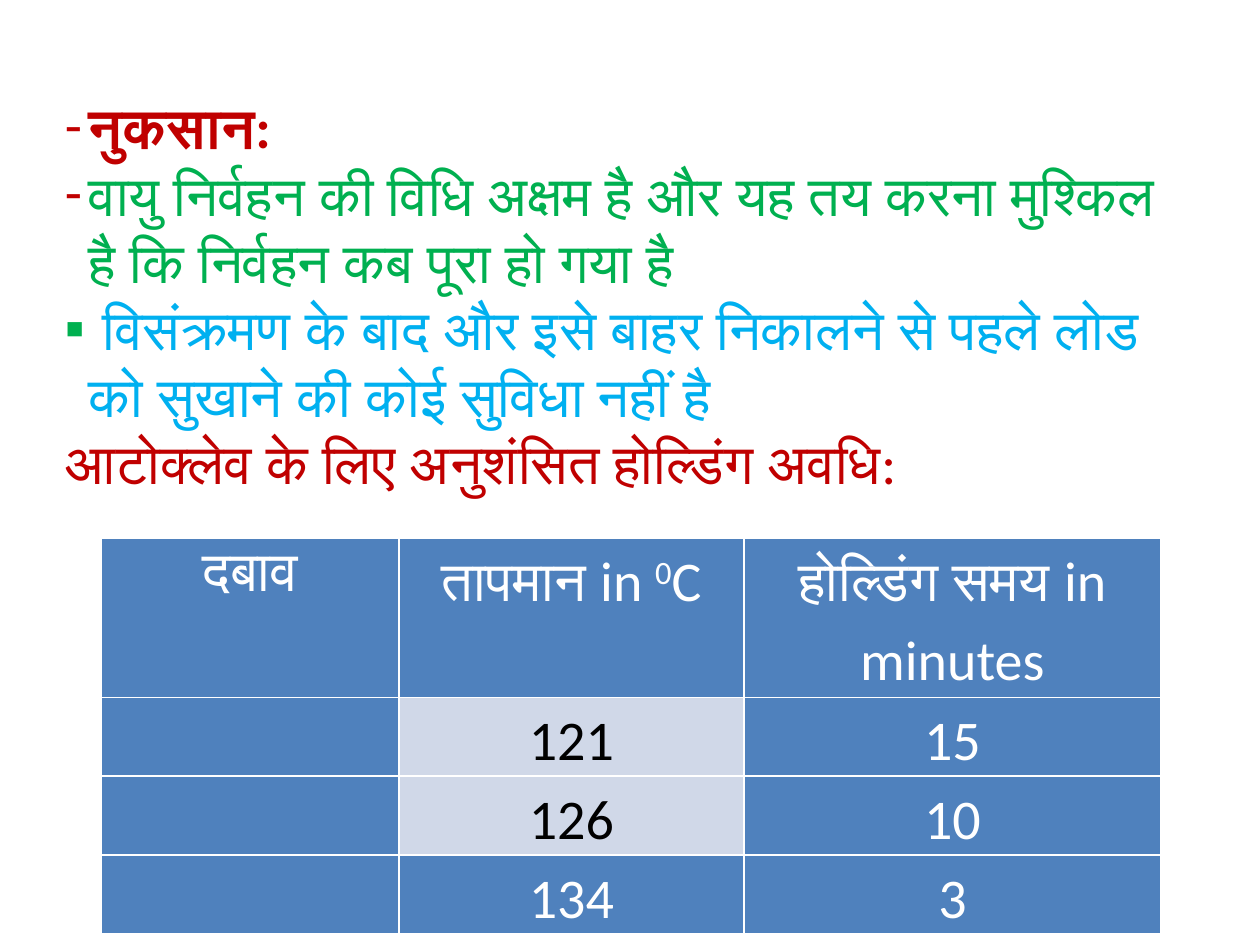
from lxml import etree
from pptx import Presentation
from pptx.dml.color import RGBColor
from pptx.enum.text import MSO_ANCHOR, PP_ALIGN
from pptx.oxml.ns import qn
from pptx.util import Pt

CENTER = PP_ALIGN.CENTER
MIDDLE = MSO_ANCHOR.MIDDLE
RED, GREEN, SKY = "C00000", "00B050", "00B0F0"
BLUE, PALE, WHITE, BLACK = "4F81BD", "D0D8E8", "FFFFFF", "000000"


def rgb(value):
    return RGBColor.from_string(value)


def format_runs(para, color, bold=False):
    for span in para.runs:
        span.font.size = Pt(32)
        span.font.name = "Calibri"
        span.font.bold = bold
        span.font.color.rgb = rgb(color)


deck = Presentation()
deck.slide_width, deck.slide_height = Pt(720), Pt(540)
page = deck.slides.add_slide(deck.slide_layouts[6])

# Holding times table
rows = [
    ["दबाव", "तापमान in 0C", "होल्डिंग समय in minutes"],
    ["", "121", "15"],
    ["", "126", "10"],
    ["", "134", "3"],
]
table = page.shapes.add_table(4, 3, Pt(57.6), Pt(307.5), Pt(606), Pt(225)).table
for column, width in zip(table.columns, (170.5, 197, 238.5)):
    column.width = Pt(width)
for row, height in zip(table.rows, (91, 45, 45, 45)):
    row.height = Pt(height)

for row_index, texts in enumerate(rows):
    for column_index, text in enumerate(texts):
        cell = table.cell(row_index, column_index)
        pale = column_index == 1 and row_index in (1, 2)
        properties = cell._tc.get_or_add_tcPr()
        for side in ("a:lnL", "a:lnR", "a:lnT", "a:lnB"):
            line = etree.SubElement(properties, qn(side), w=str(Pt(1)))
            fill = etree.SubElement(line, qn("a:solidFill"))
            etree.SubElement(fill, qn("a:srgbClr"), val=WHITE)
        cell.fill.solid()
        cell.fill.fore_color.rgb = rgb(PALE if pale else BLUE)
        if not text:
            continue
        cell.margin_left = cell.margin_right = Pt(4.5)
        cell.margin_top = cell.margin_bottom = Pt(0)
        para = cell.text_frame.paragraphs[0]
        para.alignment = CENTER
        para.line_spacing = 1.15
        para.space_after = Pt(10)
        # The degree sign is a raised zero
        before, zero, after = text.partition("0C")
        for part in (before, zero[:1], zero[1:] + after):
            if part:
                para.add_run().text = part
        if zero:
            para.runs[1]._r.get_or_add_rPr().set("baseline", "30000")
        format_runs(para, BLACK if pale else WHITE)

# Drawbacks: text, colour, bullet, bullet colour
points = [
    ("नुकसान:", RED, "-", RED),
    ("वायु निर्वहन की विधि अक्षम है और यह तय करना मुश्किल है कि निर्वहन कब पूरा हो गया है", GREEN, "-", RED),
    (" विसंक्रमण के बाद और इसे बाहर निकालने से पहले लोड को सुखाने की कोई सुविधा नहीं है", SKY, "▪", GREEN),
    ("आटोक्लेव के लिए अनुशंसित होल्डिंग अवधि:", RED, None, None),
]
box = page.shapes.add_textbox(Pt(30), Pt(29), Pt(642), Pt(278.5))
frame = box.text_frame
frame.word_wrap = True
frame.vertical_anchor = MIDDLE
for index, (text, color, bullet, bullet_color) in enumerate(points):
    para = frame.add_paragraph() if index else frame.paragraphs[0]
    para.text = text
    if bullet:
        properties = para._p.get_or_add_pPr()
        properties.set("marL", str(Pt(13.5)))
        properties.set("indent", str(-Pt(13.5)))
        tint = etree.SubElement(properties, qn("a:buClr"))
        etree.SubElement(tint, qn("a:srgbClr"), val=bullet_color)
        etree.SubElement(properties, qn("a:buFont"), typeface="Calibri")
        etree.SubElement(properties, qn("a:buChar"), char=bullet)
    format_runs(para, color, bold=index == 0)

deck.save("out.pptx")
